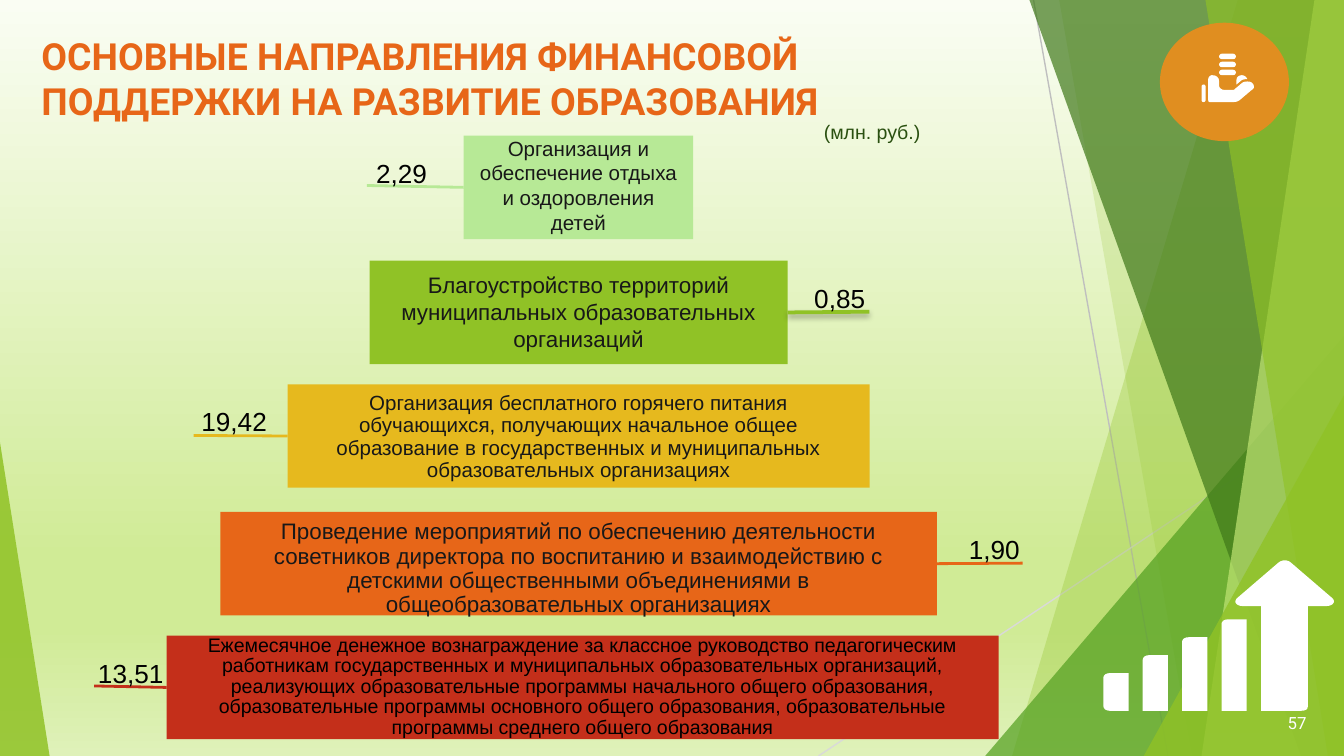
from lxml import etree
from pptx import Presentation
from pptx.dml.color import RGBColor
from pptx.enum import shapes, text
from pptx.oxml import parse_xml
from pptx.oxml.ns import nsdecls, qn
from pptx.util import Pt

WIDTH, HEIGHT = 720, 405
WHITE = RGBColor(0xFF, 0xFF, 0xFF)
BLACK = RGBColor(0, 0, 0)
INK = RGBColor(0x18, 0x18, 0x18)
DARK_GREEN = RGBColor(0x2A, 0x50, 0x10)
ORANGE = RGBColor(0xE7, 0x66, 0x18)
AMBER = RGBColor(0xE0, 0x8E, 0x20)
YELLOW = RGBColor(0xE6, 0xB9, 0x1E)
RED = RGBColor(0xC4, 0x2F, 0x1A)
GREEN = RGBColor(0x90, 0xC2, 0x26)
LIGHT_GREEN = RGBColor(0xB7, 0xE9, 0x96)
LIME = RGBColor(0xC0, 0xE4, 0x74)
LEAF = RGBColor(0x54, 0xA0, 0x21)
FOREST = RGBColor(0x3F, 0x78, 0x19)
GREY = RGBColor(0xBF, 0xBF, 0xBF)
PALE_GREY = RGBColor(0xD9, 0xD9, 0xD9)
SKY = [(0, "FAFDF3"), (74, "D0EB96"), (83, "D0EB96"), (100, "DFF1B9")]

# Rectangle, colour, text, size, line spacing, text top, value, value position, line's outer end
TIERS = [
    ((248.4, 72.7, 123, 55.4), LIGHT_GREEN, "Организация и обеспечение отдыха и оздоровления детей",
     11, None, 0, "2,29", (194.4, 80.6), (196.6, 99.4)),
    ((198, 139.7, 223.9, 55.4), GREEN,
     "Благоустройство территорий муниципальных образовательных организаций",
     12, None, 5.8, "0,85", (429.1, 147.6), (465.8, 167)),
    ((154.1, 205.9, 311.8, 55.4), YELLOW,
     "Организация бесплатного горячего питания обучающихся, получающих начальное общее "
     "образование в государственных и муниципальных образовательных организациях",
     11, 12, 4.3, "19,42", (100.8, 213.8), (103.7, 233.3)),
    ((118.1, 274.3, 383.8, 55.4), ORANGE,
     "Проведение мероприятий по обеспечению деятельности советников директора по воспитанию "
     "и взаимодействию с детскими общественными объединениями в общеобразовательных организациях",
     12, 13, 4.3, "1,90", (511.9, 282.2), (547.9, 301.7)),
    ((89.3, 340.6, 445.7, 55.4), RED,
     "Ежемесячное денежное вознаграждение за классное руководство педагогическим работникам "
     "государственных и муниципальных образовательных организаций, реализующих образовательные "
     "программы начального общего образования, образовательные программы основного общего "
     "образования, образовательные программы среднего общего образования",
     10.5, 11, 0, "13,51", (45.4, 348.5), (50.4, 367.5)),
]

# Outlines: a pair is a straight step, a triple of pairs is a curve
HAND = [(2.2, 0), ((1.4, 0), (1.2, .2), (.7, .7)), ((.2, 1.2), (0, 1.6), (0, 2.2)), (0, 13.4),
        ((0, 14), (.4, 14.4), (.8, 14.4)), (13.7, 14.4), ((15.1, 14.4), (16.4, 13.9), (17.3, 13)),
        (23.2, 8), ((24, 7.6), (24.5, 7), (24.5, 6.3)), ((24.5, 5.5), (24.2, 4.7), (23.6, 4.2)),
        ((22.9, 3.5), (21.8, 3.4), (20.9, 3.4)), ((19.5, 3.4), (18.7, 3.7), (18, 4.3)),
        (13.7, 7.9), (8.6, 7.9), ((7.1, 7.9), (5.8, 6.8), (5.8, 5.5)), (5.8, 2.9),
        ((5.8, 1.2), (4.2, 0), (2.2, 0))]
FINGERS = [(18, 0), ((16.5, 0), (15.1, .9), (15.1, 2.5)), (15.1, 5), (17.6, 2.9),
           ((18.4, 2.3), (19.6, 2.1), (20.9, 2.1)), ((20.3, .8), (19.2, 0), (18, 0))]
ARROW = [(26.6, 0), ((25.2, 0), (23.9, .6), (23, 1.4)), (.9, 20.4), ((0, 21.4), (-.1, 22.3), (.5, 23.1)),
         ((1.2, 24), (2.5, 24.5), (3.8, 24.5)), (13.9, 24.5), (13.9, 80.6), (35.6, 80.6),
         ((37.5, 80.6), (38.9, 79.9), (38.9, 78.5)), (38.9, 24.5), (49, 24.5),
         ((50.3, 24.5), (52, 24), (52.5, 23.1)), ((53.2, 22.3), (53.1, 21.4), (52.2, 20.4)),
         (30.1, 1.4), ((29.3, .6), (28, 0), (26.6, 0))]


def paint(shape, colour, opacity=100):
    shape.shadow.inherit = False
    shape.fill.solid()
    shape.fill.fore_color.rgb = colour
    shape.line.fill.background()
    if opacity < 100:
        tint = shape._element.spPr.find(qn("a:solidFill"))[0]
        etree.SubElement(tint, qn("a:alpha"), val=str(opacity * 1000))
    return shape


def add_preset(slide, kind, box, colour, opacity=100, adjust=None):
    shape = slide.shapes.add_shape(kind, *map(Pt, box))
    if adjust is not None:
        shape.adjustments[0] = adjust
    return paint(shape, colour, opacity)


def add_outline(slide, origin, steps, colour, opacity=100):
    points = [steps[0]]
    for step in steps[1:]:
        if len(step) == 2:
            points.append(step)
            continue
        curve = [points[-1], *step]
        for t in (0.25, 0.5, 0.75, 1):
            weights = ((1 - t) ** 3, 3 * t * (1 - t) ** 2, 3 * t * t * (1 - t), t ** 3)
            points.append(tuple(sum(w * p[axis] for w, p in zip(weights, curve)) for axis in (0, 1)))
    points = [(Pt(origin[0] + x), Pt(origin[1] + y)) for x, y in points]
    builder = slide.shapes.build_freeform(*points[0], scale=1.0)
    builder.add_line_segments(points[1:], close=True)
    return paint(builder.convert_to_shape(), colour, opacity)


def add_line(slide, start, end, colour, width):
    line = slide.shapes.add_connector(shapes.MSO_CONNECTOR.STRAIGHT, *map(Pt, (*start, *end)))
    line.line.color.rgb = colour
    line.line.width = Pt(width)
    etree.SubElement(line._element.spPr, qn("a:effectLst"))
    return line


def write(shape, content, size, colour, font="Arial", bold=False, align=text.PP_ALIGN.LEFT,
          anchor=text.MSO_ANCHOR.TOP, spacing=None, top=3.6, wrap=True):
    frame = shape.text_frame
    frame.word_wrap = wrap
    frame.vertical_anchor = anchor
    frame.margin_left = frame.margin_right = Pt(7.2)
    frame.margin_top, frame.margin_bottom = Pt(top), Pt(0)
    paragraph = frame.paragraphs[0]
    paragraph.text = content
    paragraph.alignment = align
    if spacing:
        paragraph.line_spacing = Pt(spacing)
    paragraph.font.size, paragraph.font.bold, paragraph.font.name = Pt(size), bold, font
    paragraph.font.color.rgb = colour


def add_label(slide, box, content, size, colour, **style):
    write(slide.shapes.add_textbox(*map(Pt, box)), content, size, colour, **style)


def add_backdrop(slide, width, height):
    stops = "".join(f'<a:gs pos="{pos * 1000}"><a:srgbClr val="{colour}"/></a:gs>' for pos, colour in SKY)
    slide._element.cSld.insert(0, parse_xml(
        f'<p:bg {nsdecls("p", "a")}><p:bgPr><a:gradFill rotWithShape="1"><a:gsLst>{stops}</a:gsLst>'
        '<a:lin ang="5400000" scaled="0"/></a:gradFill><a:effectLst/></p:bgPr></p:bg>'))
    add_line(slide, (553.7, 0), (625.7, height), GREY, 0.75)
    add_line(slide, (width, 217.4), (438.5, height), PALE_GREY, 0.75)

    def facet(top, bottom, colour, opacity):
        add_outline(slide, (0, 0), [(top, 0), (width, 0), (width, height), (bottom, height)], colour, opacity)

    def corner(left, top, right, colour, opacity, apex=1):
        add_preset(slide, shapes.MSO_SHAPE.ISOSCELES_TRIANGLE, (left, top, right - left, height - top),
                   colour, opacity, apex)

    facet(663.1, 542.2, GREEN, 30)
    facet(567.4, 638.6, GREEN, 20)
    corner(527.8, 180, width, LEAF, 72)
    facet(551.5, 697, FOREST, 70)
    facet(704.2, 643.7, LIME, 70)
    facet(645.8, 711.4, GREEN, 65)
    corner(612.7, 211.7, width, GREEN, 80)
    corner(0, 236.9, 26.6, GREEN, 85, apex=0)


def add_tier(slide, box, colour, content, size, spacing, top, value, value_at, outer):
    bar = add_preset(slide, shapes.MSO_SHAPE.RECTANGLE, box, colour)
    write(bar, content, size, BLACK if colour == RED else INK, align=text.PP_ALIGN.CENTER,
          spacing=spacing, top=top)
    left, upper, width, height = box
    on_left = outer[0] < left
    side = (left if on_left else left + width, upper + height / 2)
    line = add_line(slide, outer, side, colour, 2 if colour == GREEN else 1.5)
    line.end_connect(bar, 1 if on_left else 3)
    if colour == GREEN:  # soft shadow under this line
        line._element.spPr.find(qn("a:effectLst")).append(parse_xml(
            f'<a:outerShdw {nsdecls("a")} blurRad="38100" dist="25400" dir="5400000">'
            '<a:srgbClr val="000000"><a:alpha val="35000"/></a:srgbClr></a:outerShdw>'))
    add_label(slide, (*value_at, 49.7 if len(value) > 4 else 41.8, 24.5), value, 14, BLACK, wrap=False)


def add_coin_badge(slide, left, top, width, height):
    add_preset(slide, shapes.MSO_SHAPE.OVAL, (left, top, width, height), AMBER)
    palm = (left + 25.9, top + 28.1)
    add_outline(slide, palm, FINGERS, WHITE)
    add_outline(slide, palm, HAND, WHITE)
    pills = [(22.3, 33.1, 2.2, 9.4)] + [(31.7, 16.6 + 4.3 * row, 9, 2.9) for row in range(3)]
    for x, y, w, h in pills:
        add_preset(slide, shapes.MSO_SHAPE.ROUNDED_RECTANGLE, (left + x, top + y, w, h), WHITE, adjust=0.5)


def add_growth_icon(slide, left, top, width, height):
    add_outline(slide, (left + width - 53.3, top), ARROW, WHITE)
    for index in range(4):
        tall = 20.2 + 9.6 * index
        foot = [(3.5, tall), ((1.5, tall), (0, tall - 1), (0, tall - 2.5))] if index == 0 else [(0, tall)]
        bar = [(3.5, 0), (13.5, 0), (13.5, tall), *foot, (0, 2.5), ((0, 1), (1.5, 0), (3.5, 0))]
        add_outline(slide, (left + 21.1 * index, top + height - tall), bar, WHITE)


def main():
    presentation = Presentation()
    presentation.slide_width, presentation.slide_height = Pt(WIDTH), Pt(HEIGHT)
    slide = presentation.slides.add_slide(presentation.slide_layouts[6])
    add_backdrop(slide, WIDTH, HEIGHT)
    # Title, unit and page number
    add_label(slide, (15.1, 14.4, 486.7, 51.8), "ОСНОВНЫЕ НАПРАВЛЕНИЯ ФИНАНСОВОЙ ПОДДЕРЖКИ НА РАЗВИТИЕ ОБРАЗОВАНИЯ",
              20, ORANGE, font="Roboto", bold=True)
    add_label(slide, (432.7, 60.5, 69.1, 20.9), "(млн. руб.)", 10.5, DARK_GREEN,
              align=text.PP_ALIGN.CENTER, wrap=False)
    add_label(slide, (666.7, 376.6, 40.3, 21.6), "57", 9, WHITE, font="Roboto",
              align=text.PP_ALIGN.RIGHT, anchor=text.MSO_ANCHOR.MIDDLE, top=0)
    # Pyramid of support measures
    for tier in TIERS:
        add_tier(slide, *tier)
    # Icons
    add_coin_badge(slide, 621.4, 12.2, 69.1, 63.4)
    add_growth_icon(slide, 591.1, 300.2, 123.9, 80.6)
    presentation.save("out.pptx")


if __name__ == "__main__":
    main()
